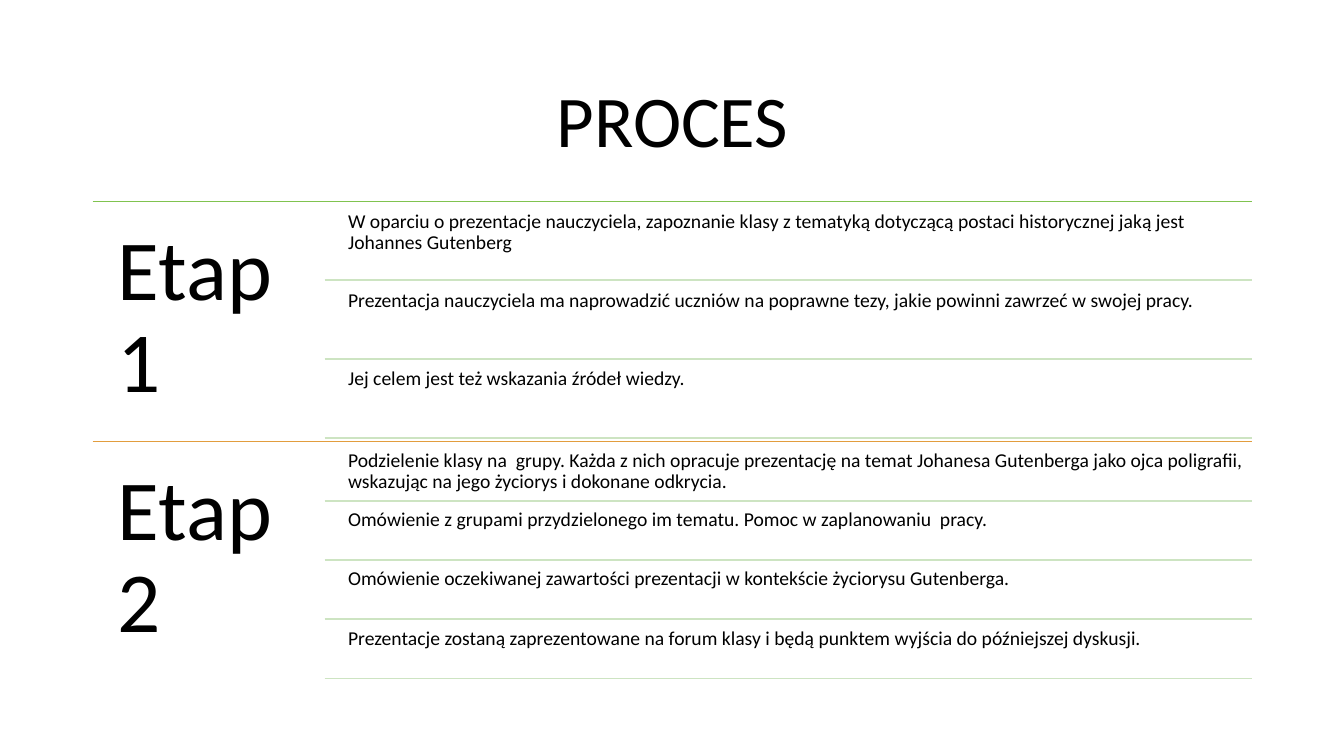
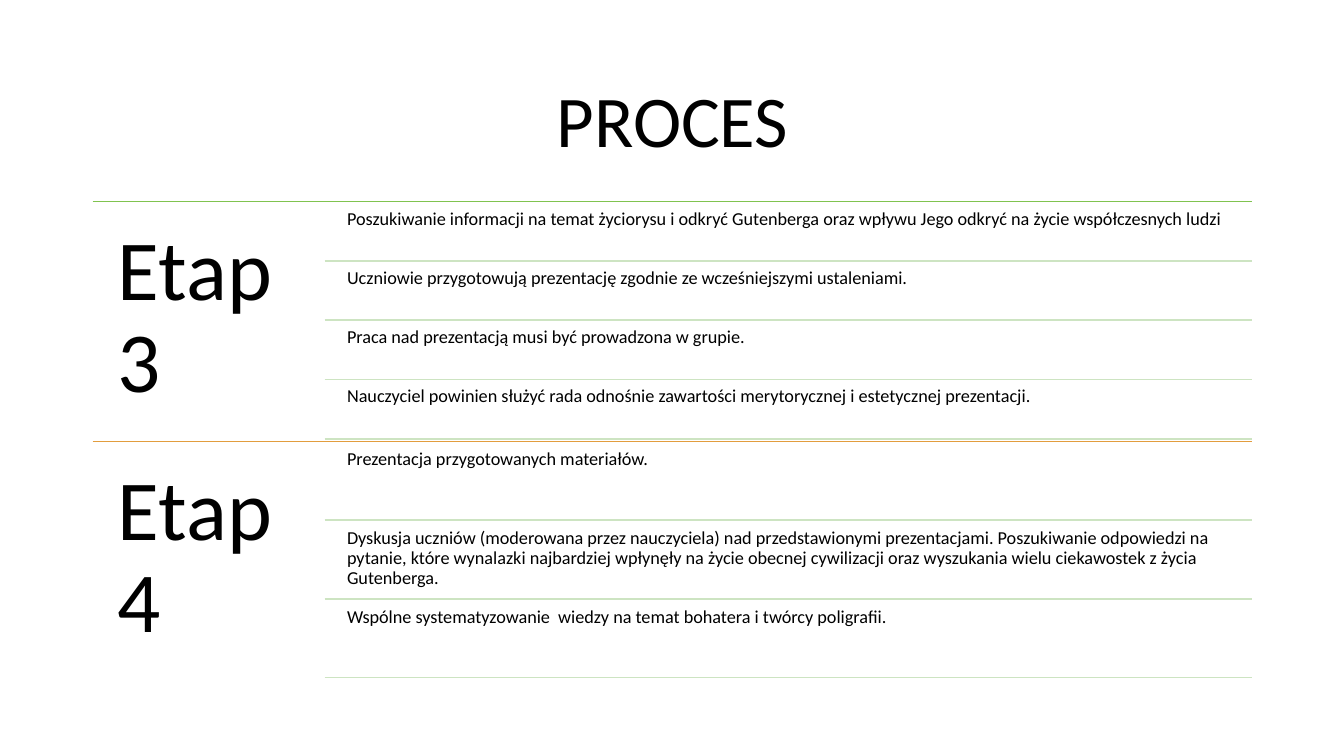
from pptx import Presentation
from pptx.dml.color import RGBColor
from pptx.enum.shapes import MSO_CONNECTOR
from pptx.enum.text import MSO_ANCHOR, PP_ALIGN
from pptx.oxml.ns import qn
from pptx.util import Inches, Pt

STRAIGHT = MSO_CONNECTOR.STRAIGHT
TOP, MIDDLE = MSO_ANCHOR.TOP, MSO_ANCHOR.MIDDLE
LEFT, CENTER = PP_ALIGN.LEFT, PP_ALIGN.CENTER

COLORS = {
    "text": "000000",
    "background": "FFFFFF",
    "first_stage": "80C34F",
    "second_stage": "E29D3E",
    "detail": "CDE4C2",
}
STAGE_COLORS = ("first_stage", "second_stage")
FONT = "Calibri"
WIDTH, HEIGHT = 13.33, 7.5
GRID_LEFT, GRID_TOP = 0.92, 2
COLUMN, ROW, COLUMNS = 2.3, 2.38, 5
DETAIL_INDENT = 0.075 * COLUMN
GAP_SHARE = 0.05

SLIDES = [
    {
        "size": 14,
        "inset": 0.06,
        "stages": [
            ("Etap 1", [
                "W oparciu o prezentacje nauczyciela, zapoznanie klasy z tematyką "
                "dotyczącą postaci historycznej jaką jest Johannes Gutenberg",
                "Prezentacja nauczyciela ma naprowadzić uczniów na poprawne tezy, "
                "jakie powinni zawrzeć w swojej pracy.",
                "Jej celem jest też wskazania źródeł wiedzy.",
            ]),
            ("Etap 2", [
                "Podzielenie klasy na  grupy. Każda z nich opracuje prezentację na "
                "temat Johanesa Gutenberga jako ojca poligrafii, wskazując na jego "
                "życiorys i dokonane odkrycia.",
                "Omówienie z grupami przydzielonego im tematu. "
                "Pomoc w zaplanowaniu  pracy.",
                "Omówienie oczekiwanej zawartości prezentacji w kontekście "
                "życiorysu Gutenberga.",
                "Prezentacje zostaną zaprezentowane na forum klasy i będą punktem "
                "wyjścia do późniejszej dyskusji.",
            ]),
        ],
    },
    {
        "size": 13,
        "inset": 0.05,
        "stages": [
            ("Etap 3", [
                "Poszukiwanie informacji na temat życiorysu i odkryć Gutenberga "
                "oraz wpływu Jego odkryć na życie współczesnych ludzi",
                "Uczniowie przygotowują prezentację zgodnie ze wcześniejszymi "
                "ustaleniami.",
                "Praca nad prezentacją musi być prowadzona w grupie.",
                "Nauczyciel powinien służyć rada odnośnie zawartości merytorycznej "
                "i estetycznej prezentacji.",
            ]),
            ("Etap 4", [
                "Prezentacja przygotowanych materiałów.",
                "Dyskusja uczniów (moderowana przez nauczyciela) nad "
                "przedstawionymi prezentacjami. Poszukiwanie odpowiedzi na pytanie, "
                "które wynalazki najbardziej wpłynęły na życie obecnej cywilizacji "
                "oraz wyszukania wielu ciekawostek z życia Gutenberga.",
                "Wspólne systematyzowanie  wiedzy na temat bohatera i twórcy "
                "poligrafii.",
            ]),
        ],
    },
]


def write_text(frame, text, *, size, inset, align=LEFT, anchor=TOP, after=0):
    """Fill a text frame with one formatted paragraph."""
    frame.word_wrap = True
    frame.vertical_anchor = anchor
    frame.margin_left = frame.margin_right = Inches(inset)
    frame.margin_top = frame.margin_bottom = Inches(inset)
    paragraph = frame.paragraphs[0]
    paragraph.alignment = align
    paragraph.line_spacing = 0.9
    paragraph.space_after = Pt(after)
    run = paragraph.add_run()
    run.text = text
    run.font.name = FONT
    run.font.size = Pt(size)
    run.font.color.rgb = RGBColor.from_string(COLORS["text"])


class ProcessDeck:
    """Holds the shared style and the slide being built."""

    def __init__(self):
        """Start an empty widescreen presentation."""
        self.presentation = Presentation()
        self.presentation.slide_width = Inches(WIDTH)
        self.presentation.slide_height = Inches(HEIGHT)
        self.slide = None

    def add_slide(self):
        """Open a blank slide with the shared background."""
        blank = self.presentation.slide_layouts[6]
        self.slide = self.presentation.slides.add_slide(blank)
        fill = self.slide.background.fill
        fill.solid()
        fill.fore_color.rgb = RGBColor.from_string(COLORS["background"])

    def add_text(self, text, left, top, width, height, **style):
        """Place a text box measured in inches."""
        box = self.slide.shapes.add_textbox(
            Inches(left), Inches(top), Inches(width), Inches(height))
        write_text(box.text_frame, text, **style)

    def add_title(self, text):
        """Place the centred title above the grid."""
        self.add_text(text, GRID_LEFT, 0.61, COLUMNS * COLUMN, 1.24, size=52,
                      inset=0.05, align=CENTER, anchor=MIDDLE, after=6)

    def add_rule(self, first_column, top, color):
        """Draw a rule from a grid column to the right edge of the grid."""
        start = GRID_LEFT + first_column * COLUMN
        end = GRID_LEFT + COLUMNS * COLUMN
        rule = self.slide.shapes.add_connector(
            STRAIGHT, Inches(start), Inches(top), Inches(end), Inches(top))
        rule.line.color.rgb = RGBColor.from_string(COLORS[color])
        rule.line.width = Pt(1.25)
        properties = rule._element.spPr
        properties.append(properties.makeelement(qn("a:effectLst"), {}))

    def add_stage(self, row, name, details, color, size, inset):
        """Fill one grid row with a stage name and its ruled details."""
        top = GRID_TOP + row * ROW
        self.add_rule(0, top, color)
        self.add_text(name, GRID_LEFT, top, COLUMN, ROW, size=61, inset=0.25)
        count = len(details)
        height = ROW / (count + (count + 1) * GAP_SHARE)
        gap = height * GAP_SHARE
        left = GRID_LEFT + COLUMN + DETAIL_INDENT
        width = (COLUMNS - 1) * COLUMN - DETAIL_INDENT
        for index, detail in enumerate(details):
            detail_top = top + gap + index * (height + gap)
            self.add_text(detail, left, detail_top, width, height,
                          size=size, inset=inset)
            self.add_rule(1, detail_top + height, "detail")


def main():
    """Build and save the process slides."""
    deck = ProcessDeck()
    for content in SLIDES:
        deck.add_slide()
        deck.add_title("PROCES")
        for row, (name, details) in enumerate(content["stages"]):
            deck.add_stage(row, name, details, STAGE_COLORS[row],
                           content["size"], content["inset"])
    deck.presentation.save("out.pptx")


if __name__ == "__main__":
    main()
